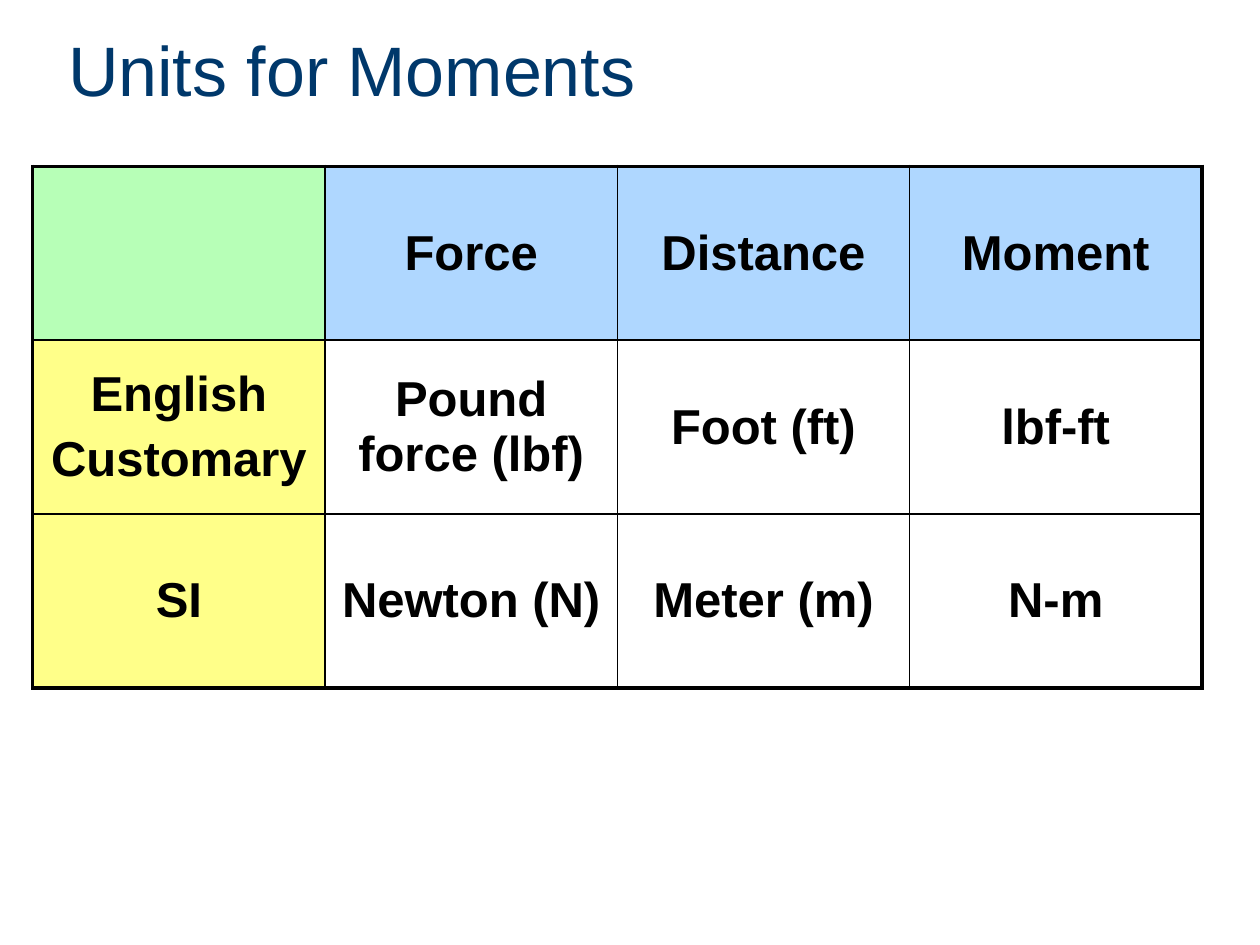
"""Build a slide with a table of the units used for moments."""
from lxml import etree
from pptx import Presentation
from pptx.dml.color import RGBColor
from pptx.enum.text import MSO_ANCHOR, PP_ALIGN
from pptx.oxml.ns import qn
from pptx.util import Inches, Pt

MIDDLE = MSO_ANCHOR.MIDDLE
CENTER = PP_ALIGN.CENTER
LEFT = PP_ALIGN.LEFT

NAVY = RGBColor(0x00, 0x38, 0x6B)
BLACK = RGBColor(0x00, 0x00, 0x00)
GREEN = RGBColor(0xB7, 0xFF, 0xB7)
BLUE = RGBColor(0xAF, 0xD7, 0xFF)
YELLOW = RGBColor(0xFF, 0xFF, 0x89)

UNITS = [
    ["", "Force", "Distance", "Moment"],
    ["English\nCustomary", "Pound force (lbf)", "Foot (ft)", "lbf-ft"],
    ["SI", "Newton (N)", "Meter (m)", "N-m"],
]


class SlideBuilder:
    font_name = "Arial"
    title_size = Pt(40)
    cell_size = Pt(28)
    cell_spacing = Pt(5.6)
    outer_border = Pt(2.25)
    inner_border = Pt(1)

    def __init__(self, slide):
        self.slide = slide

    def add_run(self, paragraph, text, size, color, bold=False):
        run = paragraph.add_run()
        run.text = text
        run.font.name = self.font_name
        run.font.size = size
        run.font.bold = bold
        run.font.color.rgb = color

    def add_title(self, text, left, top, width, height):
        title = self.slide.shapes.title
        title.left, title.top = Inches(left), Inches(top)
        title.width, title.height = Inches(width), Inches(height)
        title.text_frame.vertical_anchor = MIDDLE
        paragraph = title.text_frame.paragraphs[0]
        paragraph.alignment = LEFT
        self.add_run(paragraph, text, self.title_size, NAVY)

    def add_table(self, rows, left, top, width, height):
        row_count, column_count = len(rows), len(rows[0])
        table = self.slide.shapes.add_table(
            row_count, column_count,
            Inches(left), Inches(top), Inches(width), Inches(height),
        ).table
        table.first_row = table.horz_banding = False
        for row, texts in enumerate(rows):
            for column, text in enumerate(texts):
                cell = table.cell(row, column)
                self.set_borders(cell, {
                    "a:lnL": column == 0,
                    "a:lnR": column == column_count - 1,
                    "a:lnT": row == 0,
                    "a:lnB": row == row_count - 1,
                })
                self.set_fill(cell, row, column)
                self.set_text(cell, text)

    def set_borders(self, cell, outer_sides):
        properties = cell._tc.get_or_add_tcPr()
        for tag, is_outer in outer_sides.items():
            width = self.outer_border if is_outer else self.inner_border
            line = etree.SubElement(properties, qn(tag), w=str(width))
            fill = etree.SubElement(line, qn("a:solidFill"))
            etree.SubElement(fill, qn("a:srgbClr"), val=str(BLACK))

    def set_fill(self, cell, row, column):
        if row and column:
            cell.fill.background()
            return
        cell.fill.solid()
        cell.fill.fore_color.rgb = YELLOW if row else BLUE if column else GREEN

    def set_text(self, cell, text):
        cell.vertical_anchor = MIDDLE
        if not text:
            return
        text_frame = cell.text_frame
        for index, line in enumerate(text.split("\n")):
            paragraph = text_frame.add_paragraph() if index else text_frame.paragraphs[0]
            paragraph.alignment = CENTER
            paragraph.space_before = self.cell_spacing
            self.add_run(paragraph, line, self.cell_size, BLACK, bold=True)


def main():
    presentation = Presentation()
    presentation.slide_width = Inches(10)
    presentation.slide_height = Inches(7.5)
    title_only = presentation.slide_layouts.get_by_name("Title Only")
    builder = SlideBuilder(presentation.slides.add_slide(title_only))
    builder.add_title("Units for Moments", 0.44, 0, 9.3, 1.09)
    builder.add_table(UNITS, 0.26, 1.32, 9.28, 4.14)
    presentation.save("out.pptx")


if __name__ == "__main__":
    main()
